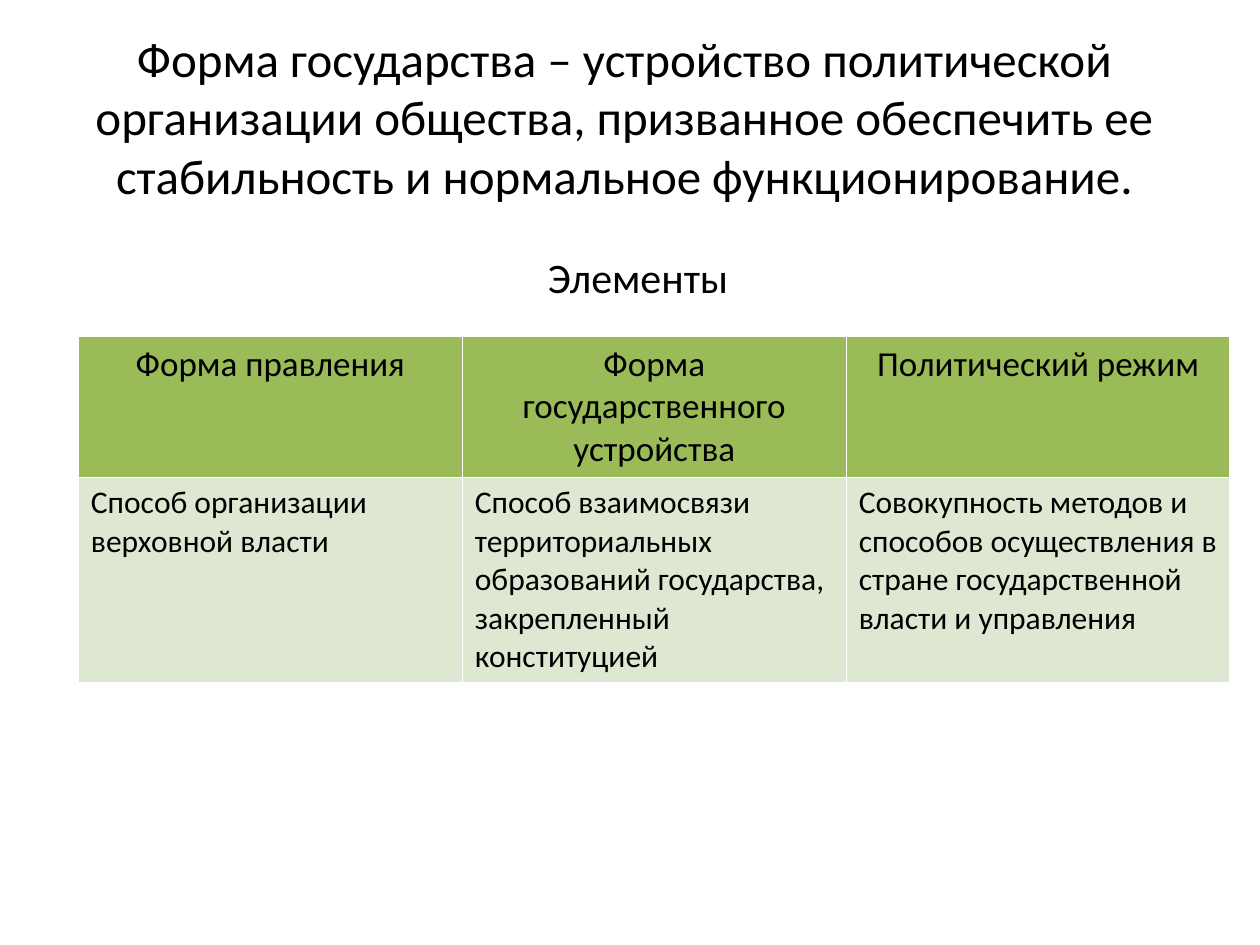
from lxml.etree import SubElement
from pptx import Presentation
from pptx.dml.color import RGBColor
from pptx.enum.text import MSO_ANCHOR, PP_ALIGN
from pptx.oxml.ns import qn
from pptx.util import Cm, Pt

FONT = "Calibri"
COLORS = {
    "text": "000000",
    "border": "FFFFFF",
    "header": "9BBB59",
    "body": "DEE7D1",
}
TITLE = ("Форма государства – устройство политической организации общества, "
         "призванное обеспечить ее стабильность и нормальное функционирование.")
SUBTITLE = "Элементы"
ELEMENTS = [
    ("Форма правления", "Способ организации верховной власти"),
    ("Форма государственного устройства",
     "Способ взаимосвязи территориальных образований государства, "
     "закрепленный конституцией"),
    ("Политический режим",
     "Совокупность методов и способов осуществления в стране "
     "государственной власти и управления"),
]


def write_text(text_frame, text, size, align):
    text_frame.text = text
    paragraph = text_frame.paragraphs[0]
    paragraph.alignment = align
    font = paragraph.runs[0].font
    font.name = FONT
    font.size = Pt(size)
    font.bold = False
    font.color.rgb = RGBColor.from_string(COLORS["text"])


def fill_placeholder(placeholder, box, text, size, anchor):
    placeholder.left, placeholder.top, placeholder.width, placeholder.height = map(Cm, box)
    write_text(placeholder.text_frame, text, size, PP_ALIGN.CENTER)
    placeholder.text_frame.vertical_anchor = anchor


def add_borders(cell):
    properties = cell._tc.get_or_add_tcPr()
    for side in ("a:lnL", "a:lnR", "a:lnT", "a:lnB"):
        line = SubElement(properties, qn(side), w=str(Pt(1)))
        solid = SubElement(line, qn("a:solidFill"))
        SubElement(solid, qn("a:srgbClr"), val=COLORS["border"])


def format_cell(cell, text, size, align, color):
    write_text(cell.text_frame, text, size, align)
    add_borders(cell)
    cell.fill.solid()
    cell.fill.fore_color.rgb = RGBColor.from_string(color)


def add_elements_table(slide):
    header_height, body_height = Cm(2.82), Cm(4.11)
    table = slide.shapes.add_table(
        2, len(ELEMENTS), Cm(1.58), Cm(6.78), Cm(23.22), header_height + body_height
    ).table
    table.rows[0].height = header_height
    table.rows[1].height = body_height
    for column, (name, definition) in enumerate(ELEMENTS):
        format_cell(table.cell(0, column), name, 20, PP_ALIGN.CENTER, COLORS["header"])
        format_cell(table.cell(1, column), definition, 18, PP_ALIGN.LEFT, COLORS["body"])


def main():
    presentation = Presentation()
    presentation.slide_width, presentation.slide_height = Cm(25.4), Cm(19.05)
    slide = presentation.slides.add_slide(presentation.slide_layouts[0])
    fill_placeholder(slide.shapes.title, (0.38, 0.3, 24.41, 4.09),
                     TITLE, 28, MSO_ANCHOR.MIDDLE)
    fill_placeholder(slide.placeholders[1], (0.91, 4.95, 23.9, 13.03),
                     SUBTITLE, 24, MSO_ANCHOR.TOP)
    add_elements_table(slide)
    presentation.save("out.pptx")


if __name__ == "__main__":
    main()
